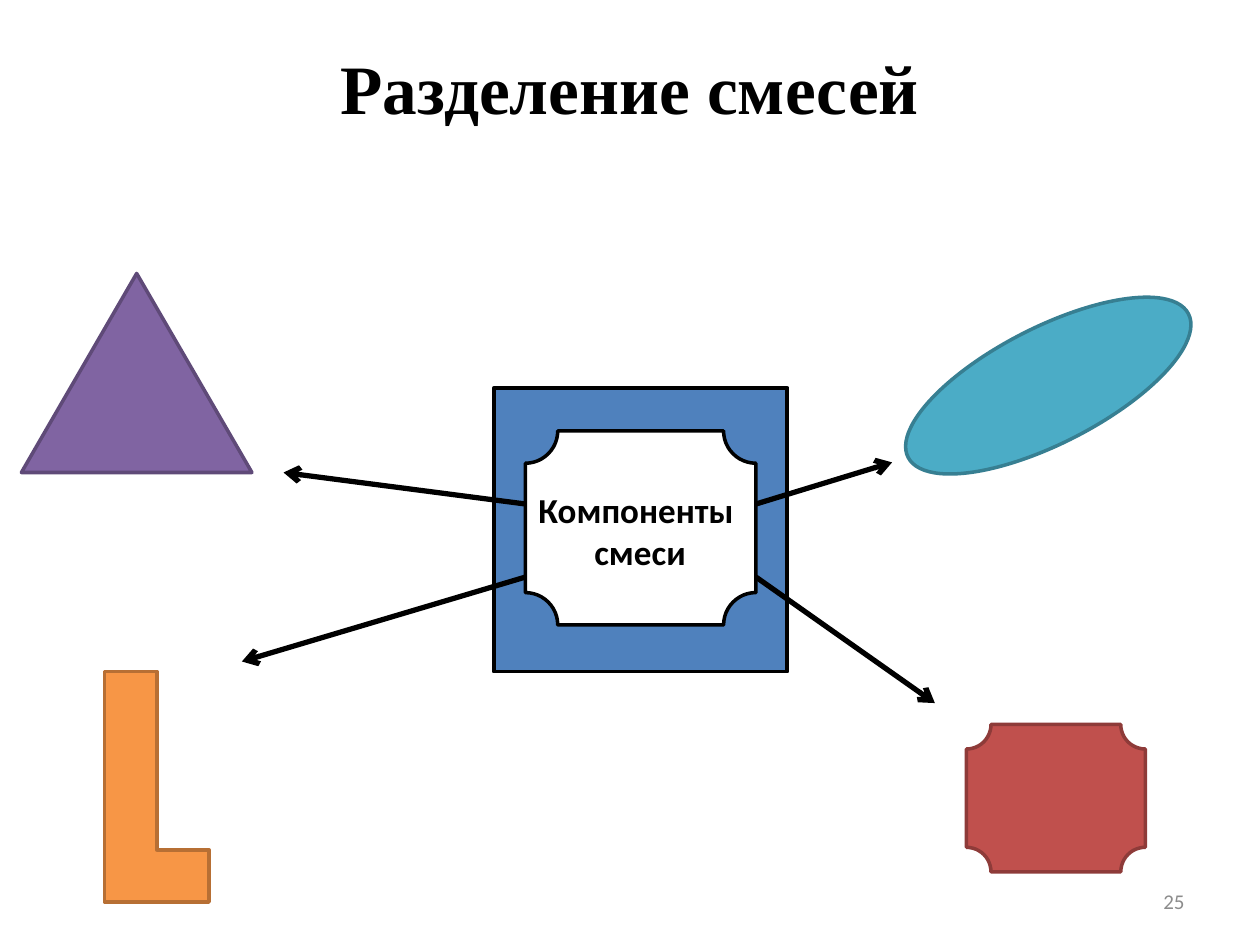
from lxml import etree
from pptx import Presentation
from pptx.dml.color import RGBColor
from pptx.enum.shapes import MSO_CONNECTOR, MSO_SHAPE
from pptx.enum.text import MSO_ANCHOR, PP_ALIGN
from pptx.oxml.ns import qn
from pptx.util import Inches, Pt

RECTANGLE = MSO_SHAPE.RECTANGLE
PLAQUE = MSO_SHAPE.PLAQUE
TRIANGLE = MSO_SHAPE.ISOSCELES_TRIANGLE
CORNER = MSO_SHAPE.CORNER
OVAL = MSO_SHAPE.OVAL
STRAIGHT = MSO_CONNECTOR.STRAIGHT
CENTER, RIGHT = PP_ALIGN.CENTER, PP_ALIGN.RIGHT
TOP, MIDDLE = MSO_ANCHOR.TOP, MSO_ANCHOR.MIDDLE
BLACK = "000000"


def color(value):
    return RGBColor.from_string(value)


class SlideBuilder:
    font = "Calibri"

    def __init__(self, slide):
        self.slide = slide

    def shape(self, kind, bounds, fill, outline, width=2, rotation=0):
        shape = self.slide.shapes.add_shape(kind, *map(Inches, bounds))
        shape.shadow.inherit = False
        shape.fill.solid()
        shape.fill.fore_color.rgb = color(fill)
        shape.line.color.rgb = color(outline)
        shape.line.width = Pt(width)
        shape.rotation = rotation

    def text(self, bounds, text, size, font=font, ink=BLACK, bold=False,
             align=CENTER, anchor=TOP):
        box = self.slide.shapes.add_textbox(*map(Inches, bounds))
        frame = box.text_frame
        frame.word_wrap = True
        frame.vertical_anchor = anchor
        frame.text = text
        for para in frame.paragraphs:
            para.alignment = align
            for span in para.runs:
                span.font.name = font
                span.font.size = Pt(size)
                span.font.bold = bold
                span.font.color.rgb = color(ink)

    def arrow(self, start, end):
        arrow = self.slide.shapes.add_connector(
            STRAIGHT, *map(Inches, (*start, *end)))
        arrow.line.color.rgb = color(BLACK)
        arrow.line.width = Pt(3)
        outline = arrow._element.spPr.find(qn("a:ln"))
        etree.SubElement(outline, qn("a:tailEnd"), type="arrow")
        etree.SubElement(arrow._element.spPr, qn("a:effectLst"))


def main():
    deck = Presentation()
    deck.slide_width, deck.slide_height = Inches(10), Inches(7.5)
    builder = SlideBuilder(deck.slides.add_slide(deck.slide_layouts[6]))

    builder.shape(RECTANGLE, (3.92, 3.08, 2.33, 2.25), "4F81BD", BLACK, width=2.25)
    builder.shape(PLAQUE, (4.17, 3.42, 1.83, 1.54), "FFFFFF", BLACK)
    builder.shape(PLAQUE, (7.67, 5.75, 1.42, 1.17), "C0504D", "8E3B39")
    builder.shape(TRIANGLE, (0.17, 2.17, 1.83, 1.58), "8064A2", "5F4A78")
    builder.shape(CORNER, (0.83, 5.33, 0.83, 1.83), "F79646", "B76F34")
    builder.shape(OVAL, (7.07, 2.6, 2.5, 0.92), "4BACC6", "377F92", rotation=332.9)

    builder.text((0, 0.3, 10, 0.78), "Разделение смесей", 39.6,
                 font="Times New Roman", bold=True, anchor=MIDDLE)
    builder.text((3.58, 3.83, 3, 0.77), "Компоненты \nсмеси", 20, bold=True)

    left, right, upper, lower = 4.17, 6, 4, 4.58
    builder.arrow((right, upper), (7.08, 3.67))
    builder.arrow((right, lower), (7.42, 5.58))
    builder.arrow((left, lower), (1.92, 5.25))
    builder.arrow((left, upper), (2.25, 3.75))

    builder.text((7.17, 6.95, 2.33, 0.4), "25", 12, ink="8C8C8C",
                 align=RIGHT, anchor=MIDDLE)
    deck.save("out.pptx")


if __name__ == "__main__":
    main()
